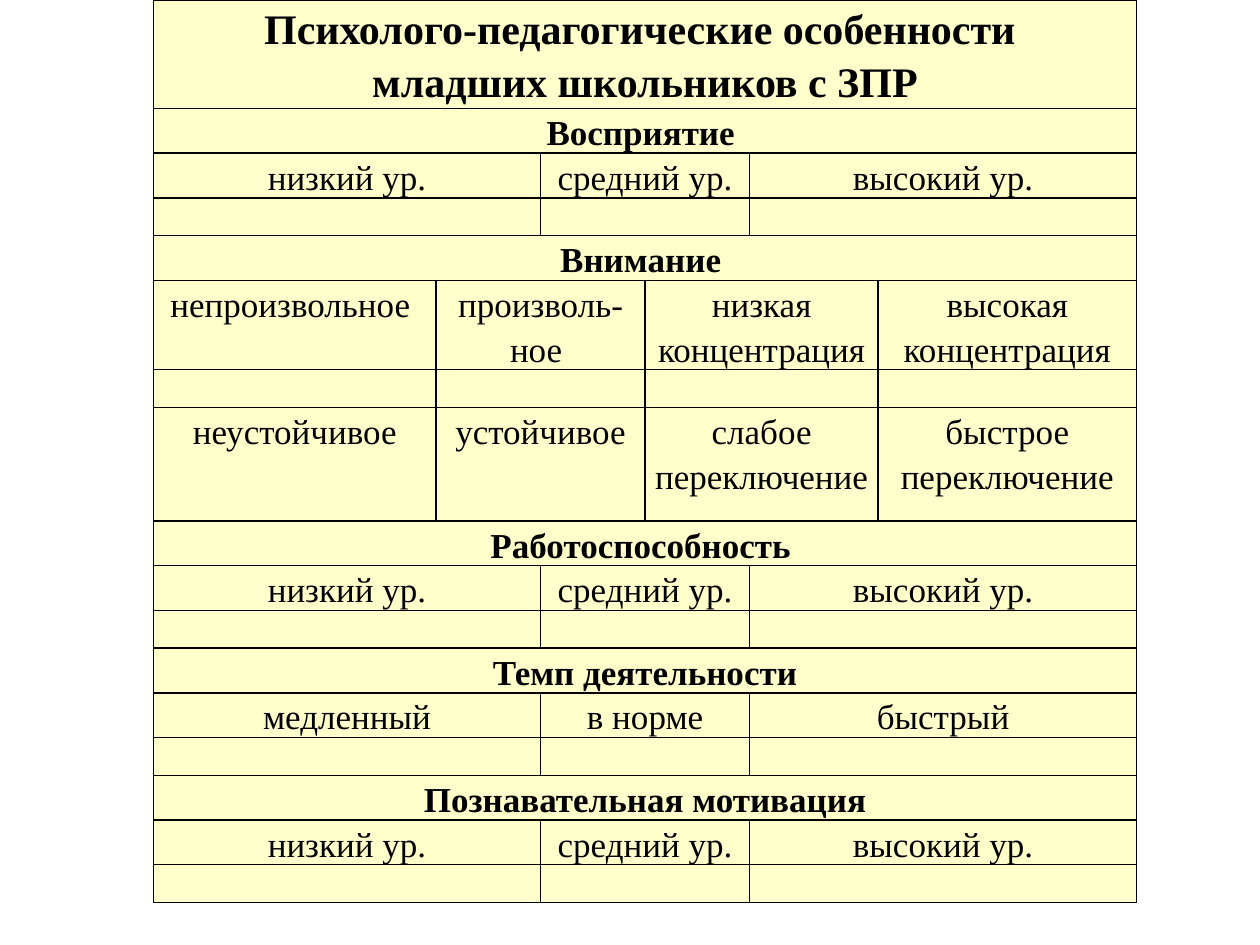
"""Build a one-slide table on the learning traits of younger pupils."""
from dataclasses import dataclass

from lxml.etree import SubElement
from pptx import Presentation
from pptx.dml.color import RGBColor
from pptx.enum.text import PP_ALIGN
from pptx.oxml.ns import qn
from pptx.util import Pt


@dataclass(frozen=True)
class Theme:
    font: str = "Times New Roman"
    ink: str = "000000"
    paper: str = "FFFFCC"
    title_size: int = 24
    body_size: int = 20
    blank_size: int = 14
    line_spacing: float = 1.15
    border: int = 1


theme = Theme()


def add_borders(cell):
    properties = cell._tc.get_or_add_tcPr()
    for side in ("lnL", "lnR", "lnT", "lnB"):
        line = SubElement(properties, qn(f"a:{side}"), w=str(Pt(theme.border)))
        fill = SubElement(line, qn("a:solidFill"))
        SubElement(fill, qn("a:srgbClr"), val=theme.ink)


def write_cell(cell, text, size, bold):
    for index, line in enumerate(text.split("\n")):
        frame = cell.text_frame
        paragraph = frame.add_paragraph() if index else frame.paragraphs[0]
        paragraph.alignment = PP_ALIGN.CENTER
        paragraph.line_spacing = theme.line_spacing
        run = paragraph.add_run()
        run.text = line
        run.font.name = theme.font
        run.font.size = Pt(size)
        run.font.bold = bold
        run.font.color.rgb = RGBColor.from_string(theme.ink)


column_widths = [161.3, 59.8, 59.8, 59.8, 73.4, 147.6]
column_count = len(column_widths)
starts_by_count = {1: [0], 3: [0, 2, 4], 4: [0, 1, 3, 5]}
low, tall = 21.6, 25.2
levels = ["низкий ур.", "средний ур.", "высокий ур."]
paces = ["медленный", "в норме", "быстрый"]
attention_kinds = ["непроизвольное ", "произволь-ное ", "низкая концентрация", "высокая концентрация"]
attention_shifts = ["неустойчивое", "устойчивое", "слабое переключение", "быстрое переключение"]
blank_three, blank_four = [""] * 3, [""] * 4

rows = [
    (62, ["Психолого-педагогические особенности \nмладших школьников с ЗПР"]),
    (low, ["Восприятие "]),
    (tall, levels),
    (low, blank_three),
    (low, ["Внимание "]),
    (43.2, attention_kinds),
    (low, blank_four),
    (64.8, attention_shifts),
    (low, ["Работоспособность "]),
    (tall, levels),
    (low, blank_three),
    (low, ["Темп деятельности"]),
    (low, paces),
    (low, blank_three),
    (low, ["Познавательная мотивация"]),
    (tall, levels),
    (low, blank_three),
]

presentation = Presentation()
presentation.slide_width = Pt(720)
presentation.slide_height = Pt(540)
slide = presentation.slides.add_slide(presentation.slide_layouts[6])

traits = slide.shapes.add_table(
    len(rows), column_count, Pt(87.8), Pt(0),
    Pt(sum(column_widths)), Pt(sum(height for height, _ in rows)),
).table
for column, width in zip(traits.columns, column_widths):
    column.width = Pt(width)

for row_index, (height, texts) in enumerate(rows):
    traits.rows[row_index].height = Pt(height)
    for column_index in range(column_count):
        cell = traits.cell(row_index, column_index)
        add_borders(cell)
        cell.fill.solid()
        cell.fill.fore_color.rgb = RGBColor.from_string(theme.paper)
        cell.margin_left = cell.margin_right = Pt(3.6)
        cell.margin_top = cell.margin_bottom = Pt(0)

    starts = starts_by_count[len(texts)]
    for start, end, text in zip(starts, starts[1:] + [column_count], texts):
        cell = traits.cell(row_index, start)
        if end - start > 1:
            cell.merge(traits.cell(row_index, end - 1))
        if text:
            size = theme.body_size if row_index else theme.title_size
            write_cell(cell, text, size, bold=len(texts) == 1)

    for cell in traits.rows[row_index].cells:
        if not cell.text_frame.text:
            blank = cell.text_frame.paragraphs[0]._p
            SubElement(blank, qn("a:endParaRPr"), sz=str(theme.blank_size * 100))

presentation.save("out.pptx")
